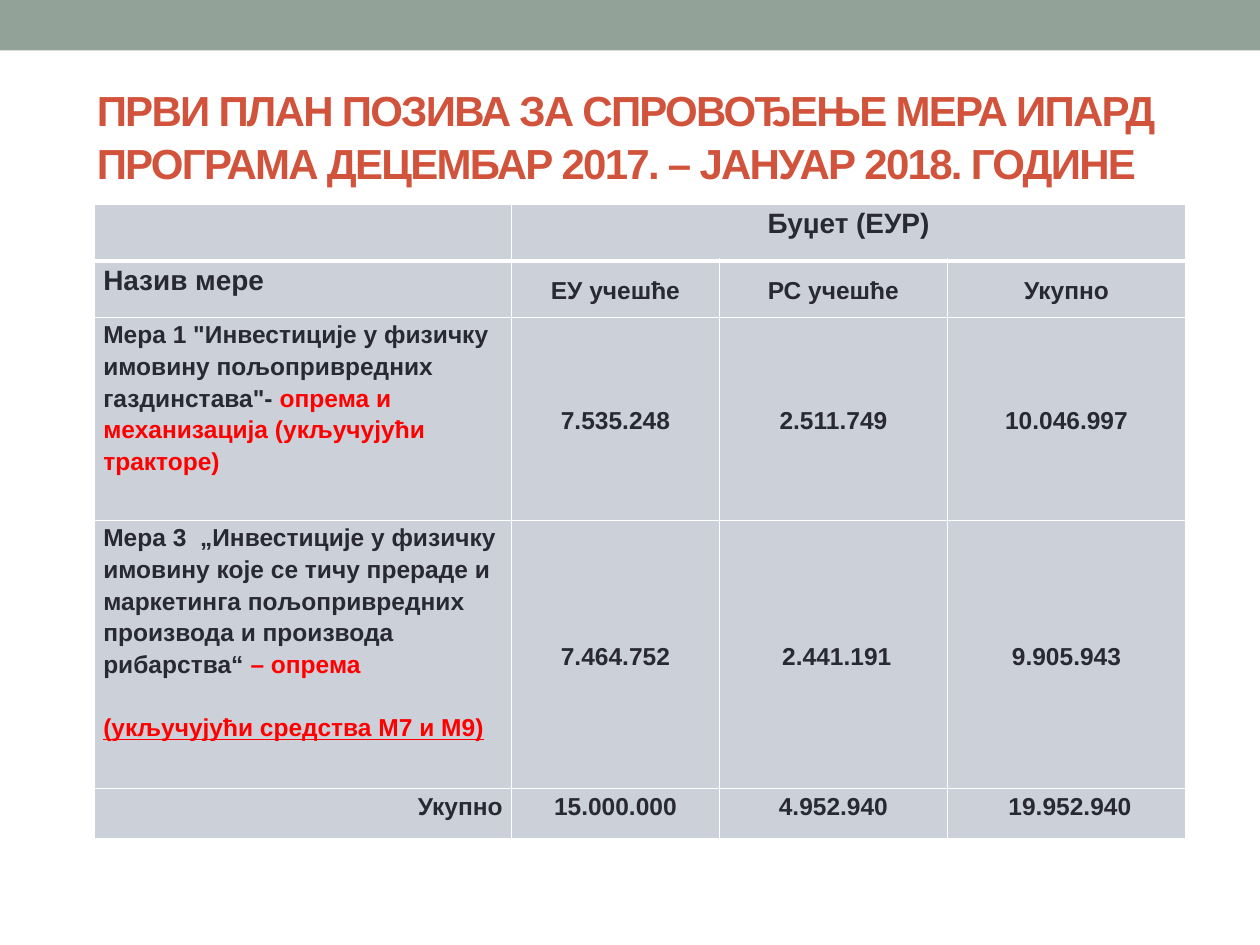
from pptx import Presentation, util as u
from pptx.dml.color import RGBColor
from pptx.enum import shapes, text
from pptx.oxml import parse_xml
from pptx.oxml.ns import nsdecls

THEME = dict(font="Arial", band="93A299", title="D2533C", ink="292934", red="FF0000",
             cell="CCD1D9", rule="FFFFFF", big=24, head=16, body=14)
LEFT, MID, RIGHT = text.PP_ALIGN.LEFT, text.PP_ALIGN.CENTER, text.PP_ALIGN.RIGHT

deck = Presentation()
deck.slide_width, deck.slide_height = u.Inches(10), u.Inches(7.5)
W, H = deck.slide_width, deck.slide_height
slide = deck.slides.add_slide(deck.slide_layouts[6])


def write(frame, paras, size=THEME["body"], color="ink", align=LEFT, lines=1.15, gap=0, track=0):
    """Each paragraph is a list of (words, format) runs."""
    frame.word_wrap = True
    for i, runs in enumerate(paras):
        para = frame.paragraphs[0] if i == 0 else frame.add_paragraph()
        para.alignment, para.line_spacing = align, lines
        para.space_before = u.Pt(gap if i else 0)
        for words, look in runs:
            run = para.add_run()
            run.text = words
            font = run.font
            font.name, font.size, font.bold = THEME["font"], u.Pt(size), True
            font.underline = look.get("line", False)
            font.color.rgb = RGBColor.from_string(THEME[look.get("color", color)])
            if track:
                run._r.get_or_add_rPr().set("spc", str(track * 100))


def edge(cell, side, width):
    """Draw one border line of a cell."""
    cell._tc.get_or_add_tcPr().append(parse_xml(
        f'<a:{side} {nsdecls("a")} w="{u.Pt(width)}"><a:solidFill>'
        f'<a:srgbClr val="{THEME["rule"]}"/></a:solidFill></a:{side}>'))


# Top band
band = slide.shapes.add_shape(shapes.MSO_SHAPE.RECTANGLE, 0, 0, W, int(H * 0.0533))
band.shadow.inherit = False
band.fill.solid()
band.fill.fore_color.rgb = RGBColor.from_string(THEME["band"])
band.line.fill.background()

# Title
title = slide.shapes.add_textbox(int(W * 0.067), int(H * 0.08), int(W * 0.89), int(H * 0.12))
write(title.text_frame,
      [[("ПРВИ ПЛАН ПОЗИВА ЗА СПРОВОЂЕЊЕ МЕРА ИПАРД "
         "ПРОГРАМА ДЕЦЕМБАР 2017. – ЈАНУАР 2018. ГОДИНЕ", {})]],
      size=THEME["big"], color="title", lines=1.05, track=-1)

# Budget table: column and row sizes in inches
cols, rows = [3.31, 1.65, 1.81, 1.89], [0.45, 0.45, 1.61, 2.13, 0.4]
red = dict(color="red")
first = [[("Мера 1 \"Инвестиције у физичку имовину пољопривредних газдинстава\"- ", {}),
          ("опрема и механизација (укључујући тракторе)", red)]]
third = [[("Мера 3  „Инвестиције у физичку имовину које се тичу прераде и маркетинга "
           "пољопривредних производа и производа рибарства“ ", {}), ("– опрема", red)],
         [("(укључујући средства М7 и М9)", dict(red, line=True))]]
data = [
    ["", "Буџет (ЕУР)", "", ""],
    ["Назив мере", "ЕУ учешће", "РС учешће", "Укупно"],
    [first, "7.535.248", "2.511.749", "10.046.997"],
    [third, "7.464.752", " 2.441.191", "9.905.943"],
    ["Укупно", "15.000.000", "4.952.940", " 19.952.940"],
]
table = slide.shapes.add_table(len(rows), len(cols), int(W * 0.075), int(H * 0.216),
                               u.Inches(sum(cols)), u.Inches(sum(rows))).table
for col, wide in zip(table.columns, cols):
    col.width = u.Inches(wide)
for row, tall in zip(table.rows, rows):
    row.height = u.Inches(tall)
table.cell(0, 1).merge(table.cell(0, 3))

last = len(rows) - 1
for r, line in enumerate(data):
    for c, item in enumerate(line):
        cell = table.cell(r, c)
        cell.margin_left = cell.margin_right = u.Inches(0.07)
        cell.margin_top = cell.margin_bottom = 0
        if c and 0 < r < last:
            cell.vertical_anchor = text.MSO_ANCHOR.MIDDLE
        # Borders come before the fill; the header has a thick rule below
        for side in ("lnL", "lnR", "lnT", "lnB"):
            thick = (r, side) in ((0, "lnB"), (1, "lnT"))
            edge(cell, side, 3 if thick else 1)
        cell.fill.solid()
        cell.fill.fore_color.rgb = RGBColor.from_string(THEME["cell"])
        if item:
            paras = [[(item, {})]] if isinstance(item, str) else item
            large = r == 0 or (r, c) == (1, 0)
            write(cell.text_frame, paras, size=THEME["head" if large else "body"],
                  align=MID if c else RIGHT if r == last else LEFT, gap=18)

deck.save("out.pptx")
